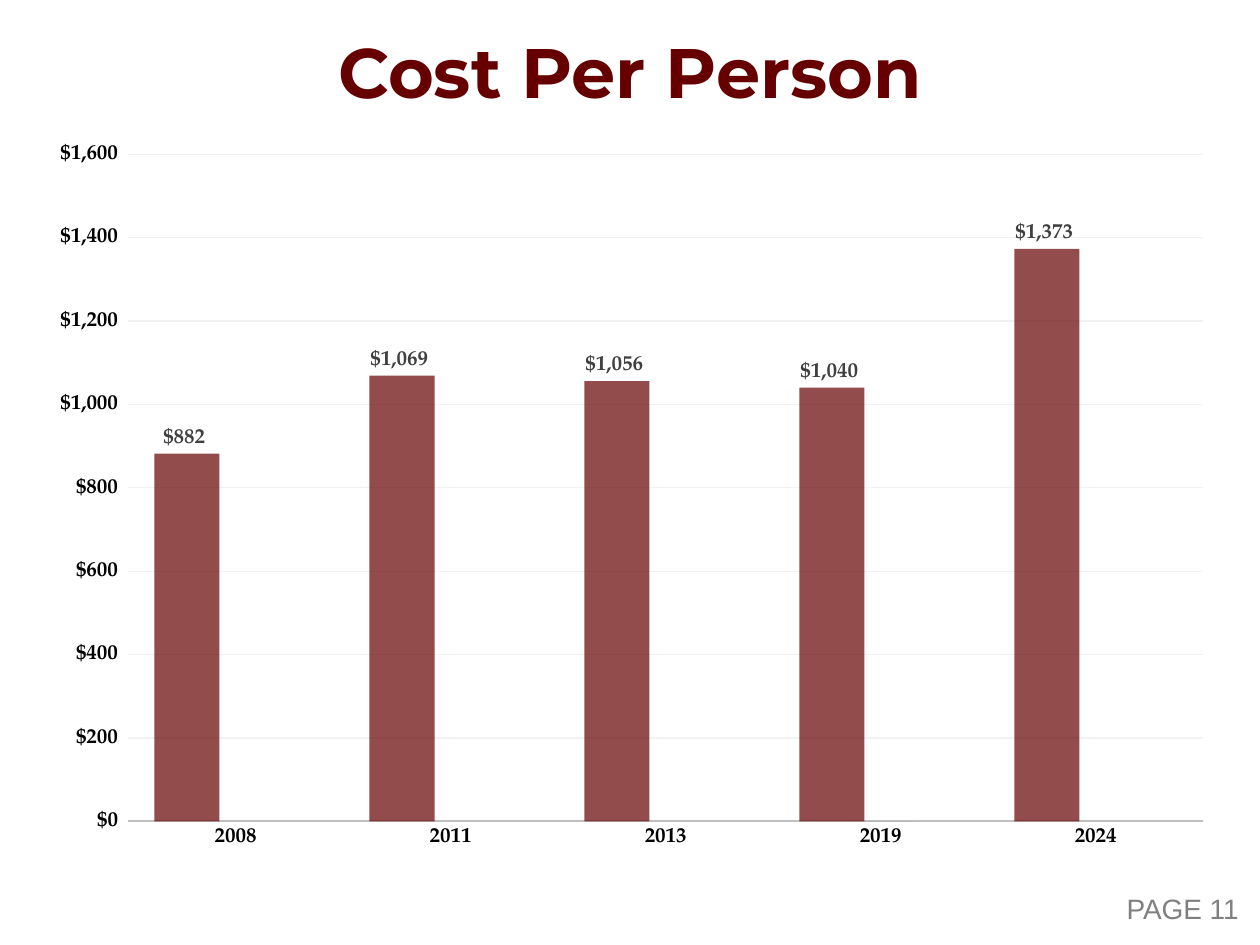
"""Build the Cost Per Person slide with its column chart."""
from lxml.etree import SubElement
from pptx import Presentation
from pptx.chart.data import CategoryChartData
from pptx.dml.color import RGBColor
from pptx.enum.chart import XL_CHART_TYPE, XL_LABEL_POSITION, XL_TICK_MARK
from pptx.enum.text import MSO_ANCHOR, PP_ALIGN
from pptx.oxml.ns import qn
from pptx.util import Pt

COLORS = {"maroon": "660000", "gray": "757871", "brown": "6E4C1E",
          "black": "000000", "label": "404040", "page": "808080",
          "axis": "BFBFBF", "grid": "F2F2F2"}
CHART_FONT = "TeX Gyre Pagella"
DOLLARS = '"$"#,##0_);[Red]\\("$"#,##0\\)'
YEARS = ["2008", "2011", "2013", "2019", "2024"]
COSTS = {"Series 1": [882, 1069, 1056, 1040, 1373],
         "Series 2": [None, None, None, 0, None],
         "Series 3": [None] * 5}
PLOT_AREA = {"x": 0.08, "y": 0.03, "w": 0.9, "h": 0.91}


def rgb(name):
    return RGBColor.from_string(COLORS[name])


def format_font(font, size=12, color="black", bold=False, name=CHART_FONT):
    font.size, font.bold, font.name = Pt(size), bold, name
    font.color.rgb = rgb(color)


def write_text(box, text, align=PP_ALIGN.LEFT, anchor=MSO_ANCHOR.TOP, **style):
    frame = box.text_frame
    frame.word_wrap = True
    frame.vertical_anchor = anchor
    paragraph = frame.paragraphs[0]
    paragraph.alignment = align
    run = paragraph.add_run()
    run.text = text
    format_font(run.font, **style)


def add_title(slide):
    title = slide.shapes.title
    title.left, title.top, title.width, title.height = Pt(3.6), Pt(5), Pt(712.8), Pt(70.6)
    write_text(title, "Cost Per Person", align=PP_ALIGN.CENTER, anchor=MSO_ANCHOR.MIDDLE,
               size=40, color="maroon", bold=True, name="Montserrat")


def add_page_number(slide):
    page = slide.shapes.add_textbox(Pt(599.8), Pt(506.2), Pt(115.2), Pt(26.6))
    write_text(page, "PAGE 11", align=PP_ALIGN.RIGHT, size=16, color="page", name="Arial")


def place_plot_area(chart):
    plot_area = chart.plots[0]._element.getparent()
    for old_layout in plot_area.findall(qn("c:layout")):
        plot_area.remove(old_layout)
    layout = SubElement(plot_area, qn("c:layout"))
    plot_area.insert(0, layout)
    manual = SubElement(layout, qn("c:manualLayout"))
    settings = {"layoutTarget": "inner", "xMode": "edge", "yMode": "edge", **PLOT_AREA}
    for tag, value in settings.items():
        SubElement(manual, qn(f"c:{tag}")).set("val", str(value))


def format_axes(chart):
    years, dollars = chart.category_axis, chart.value_axis
    for axis in (years, dollars):
        axis.major_tick_mark = axis.minor_tick_mark = XL_TICK_MARK.NONE
        format_font(axis.tick_labels.font, bold=True)
    years.format.line.color.rgb = rgb("axis")
    years.format.line.width = Pt(1.25)
    dollars.minimum_scale, dollars.maximum_scale, dollars.major_unit = 0, 1600, 200
    dollars.format.line.fill.background()
    dollars.major_gridlines.format.line.color.rgb = rgb("grid")
    dollars.major_gridlines.format.line.width = Pt(0.75)
    dollars.tick_labels.number_format = DOLLARS
    dollars.tick_labels.number_format_is_linked = False


def fill_columns(series, color):
    series.invert_if_negative = False
    series.format.fill.solid()
    series.format.fill.fore_color.rgb = rgb(color)
    solid = series._element.find(qn("c:spPr")).find(qn("a:solidFill"))
    SubElement(solid[0], qn("a:alpha")).set("val", "70000")


def label_columns(series, bold):
    labels = series.data_labels
    labels.show_value = True
    labels.position = XL_LABEL_POSITION.OUTSIDE_END
    labels.number_format = DOLLARS
    labels.number_format_is_linked = False
    format_font(labels.font, color="label", bold=bold)


def add_cost_chart(slide):
    costs = CategoryChartData(number_format=DOLLARS)
    costs.categories = YEARS
    for name, values in COSTS.items():
        costs.add_series(name, values)
    chart = slide.shapes.add_chart(XL_CHART_TYPE.COLUMN_CLUSTERED, Pt(18.7), Pt(75.6),
                                   Pt(682.6), Pt(419), costs).chart
    chart.has_legend = chart.has_title = False
    format_font(chart.font, size=10)
    plot = chart.plots[0]
    plot.gap_width, plot.overlap, plot.vary_by_categories = 80, 25, False
    for series, color in zip(plot.series, ("maroon", "gray", "brown")):
        fill_columns(series, color)
    label_columns(plot.series[0], bold=True)
    label_columns(plot.series[2], bold=False)
    format_axes(chart)
    place_plot_area(chart)


def main():
    deck = Presentation()
    deck.slide_width, deck.slide_height = Pt(720), Pt(540)
    slide = deck.slides.add_slide(deck.slide_layouts[5])
    add_page_number(slide)
    add_title(slide)
    add_cost_chart(slide)
    deck.save("out.pptx")


if __name__ == "__main__":
    main()
